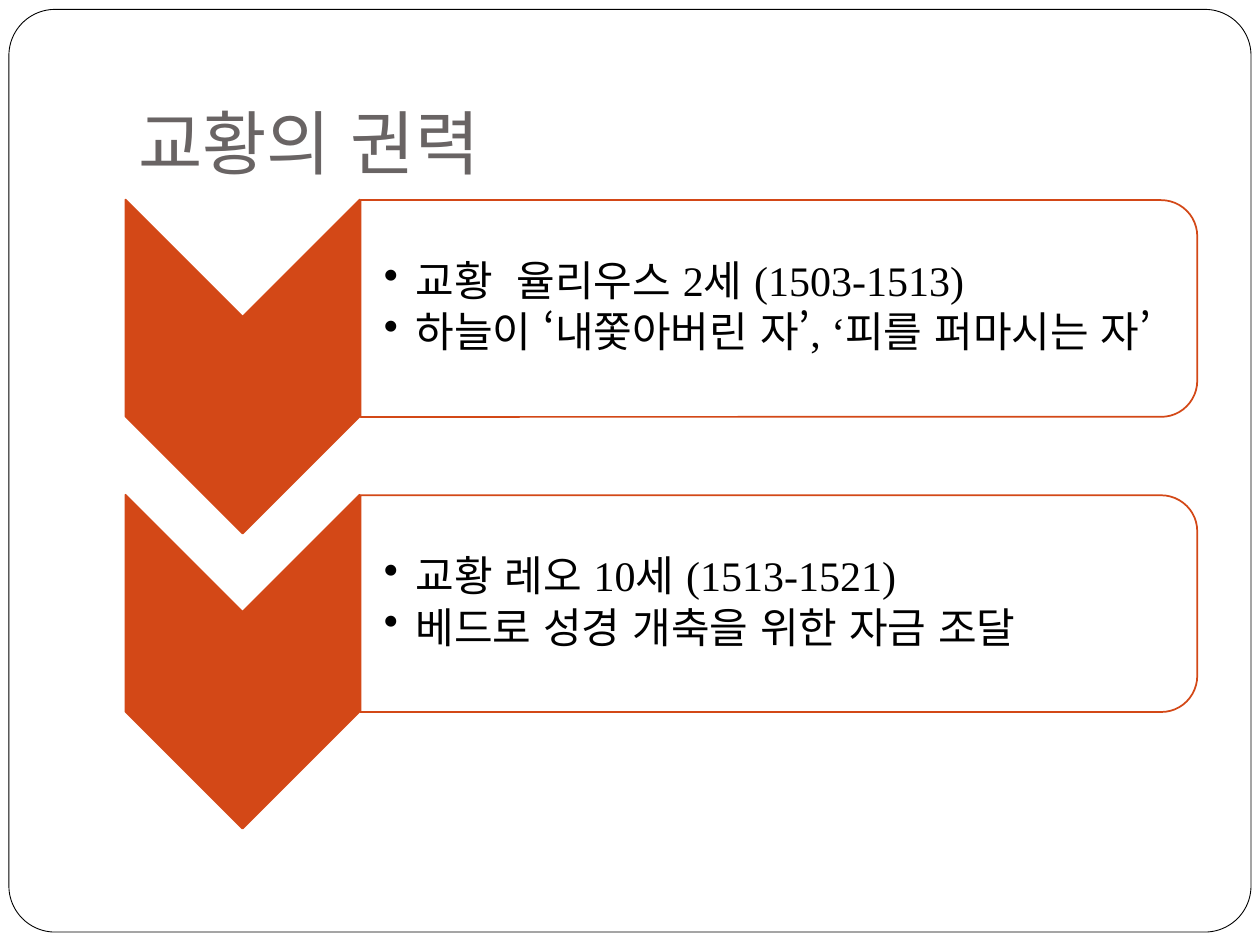
import pptx
import pptx.dml.color
import pptx.enum.lang
import pptx.enum.shapes
import pptx.enum.text
import pptx.oxml
import pptx.oxml.ns
import pptx.util
from pptx.util import Cm, Pt

TITLE = "교황의 권력"
POPES = [
    ["교황  율리우스 2세 (1503-1513)", "하늘이 ‘내쫓아버린 자’, ‘피를 퍼마시는 자’"],
    ["교황 레오 10세 (1513-1521)", "베드로 성경 개축을 위한 자금 조달"],
]
THEME = {
    "accent": "D34817", "paper": "FFFFFF", "frame": "000000",
    "title": ("Cabin", 40, "696464"),
    "body": ("Times New Roman", 24, "000000"),
}
ROW_STEP = 5.95
SHAPES = pptx.enum.shapes.MSO_SHAPE
ANCHORS = pptx.enum.text.MSO_ANCHOR


def rgb(color):
    return pptx.dml.color.RGBColor.from_string(color)


def add_box(slide, preset, box, fill, line, line_width):
    shape = slide.shapes.add_shape(preset, *map(Cm, box))
    shape.shadow.inherit = False
    shape.fill.solid()
    shape.fill.fore_color.rgb = rgb(fill)
    shape.line.color.rgb = rgb(line)
    shape.line.width = Pt(line_width)
    return shape


def add_turned(slide, preset, center, size, fill):
    """Add a shape turned a quarter clockwise about its center; size is before turning."""
    corner = [middle - length / 2 for middle, length in zip(center, size)]
    shape = add_box(slide, preset, (*corner, *size), fill, THEME["accent"], 1)
    shape.rotation = 90
    return shape


def add_text(slide, box, lines, style, anchor, insets):
    frame = slide.shapes.add_textbox(*map(Cm, box)).text_frame
    frame.word_wrap = True
    frame.vertical_anchor = anchor
    (frame.margin_left, frame.margin_top,
     frame.margin_right, frame.margin_bottom) = map(Cm, insets)
    frame.text = "\n".join(lines)
    font_name, size, color = style
    for paragraph in frame.paragraphs:
        paragraph.font.name = font_name
        paragraph.font.size = Pt(size)
        paragraph.font.color.rgb = rgb(color)
        for run in paragraph.runs:
            run.font.language_id = pptx.enum.lang.MSO_LANGUAGE_ID.KOREAN
    return frame.paragraphs


def add_bullet(paragraph):
    paragraph.line_spacing = 0.9
    properties = paragraph._p.get_or_add_pPr()
    properties.set("marL", str(Cm(0.64)))
    properties.set("indent", str(Cm(-0.64)))
    namespace = pptx.oxml.ns.nsdecls("a")
    spacing = pptx.oxml.parse_xml(
        f'<a:spcAft {namespace}><a:spcPct val="15000"/></a:spcAft>')
    bullet = pptx.oxml.parse_xml(f'<a:buChar {namespace} char="•"/>')
    properties.insert(1, spacing)
    properties.insert(2, bullet)


def add_pope(slide, row, facts):
    down = row * ROW_STEP
    add_turned(slide, SHAPES.CHEVRON, (4.89, 7.39 + down), (6.73, 4.72), THEME["accent"])
    panel = add_turned(slide, SHAPES.ROUND_2_SAME_RECTANGLE, (15.7, 6.22 + down),
                       (4.37, 16.87), THEME["paper"])
    color = panel.fill._xPr.find(".//" + pptx.oxml.ns.qn("a:srgbClr"))
    color.append(pptx.oxml.parse_xml(
        f'<a:alpha {pptx.oxml.ns.nsdecls("a")} val="90000"/>'))
    for paragraph in add_text(slide, (7.26, 4.24 + down, 16.66, 3.96), facts,
                              THEME["body"], ANCHORS.MIDDLE, (0.48, 0.05, 0.05, 0.05)):
        add_bullet(paragraph)


def main():
    deck = pptx.Presentation()
    deck.slide_width, deck.slide_height = Cm(25.4), Cm(19.05)
    slide = deck.slides.add_slide(deck.slide_layouts[6])
    border = add_box(slide, SHAPES.ROUNDED_RECTANGLE, (0.18, 0.19, 25.04, 18.6),
                     THEME["paper"], THEME["frame"], 0.5)
    border.adjustments[0] = 0.05
    add_text(slide, (2.54, 0.76, 21.59, 3.18), [TITLE], THEME["title"],
             ANCHORS.BOTTOM, (0.25, 0.13, 0.25, 0.25))
    for row, facts in enumerate(POPES):
        add_pope(slide, row, facts)
    deck.save("out.pptx")


if __name__ == "__main__":
    main()
